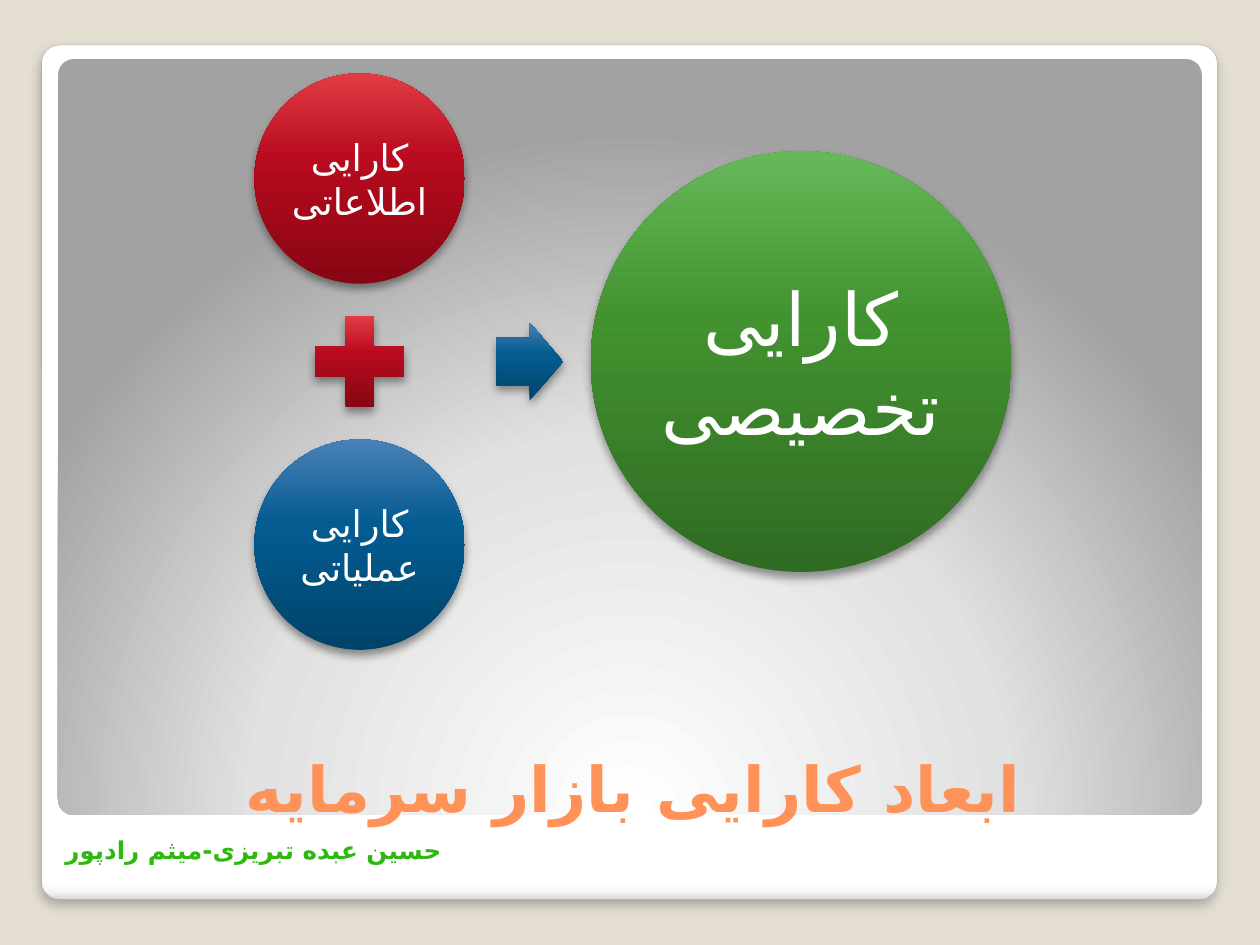
from dataclasses import dataclass

from pptx import Presentation
from pptx.dml.color import RGBColor
from pptx.enum.shapes import MSO_SHAPE as Shape
from pptx.enum.text import MSO_ANCHOR as Anchor, MSO_AUTO_SIZE as AutoSize, PP_ALIGN as Align
from pptx.oxml import parse_xml
from pptx.oxml.ns import nsdecls, qn
from pptx.util import Cm, Pt

FONT = "DejaVu Sans"
COLORS = {
    "background": "E3DED1",
    "frame_line": "A4A4A4",
    "title": "FF9258",
    "authors": "2DB90E",
    "white": "FFFFFF",
    "shadow": "000000",
}
FRAME_STOPS = [(0, "FFFFFF"), (98, "FFFFFF"), (99, "F7F7F7"), (100, "DADADA")]
PANEL_STOPS = [(0, "FFFFFF"), (55, "E1E1E1"), (100, "A2A2A2")]
GLOSS = {
    "red": [(0, "870614"), (60, "B80B1E"), (100, "E13C45")],
    "blue": [(0, "00436A"), (60, "035C91"), (100, "4A80B7")],
    "green": [(0, "2F6B22"), (60, "429230"), (100, "66B959")],
}
PANEL_PATH = '<a:path path="circle"><a:fillToRect l="50000" t="175000" r="50000" b="-75000"/></a:path>'

STACK_X, MID_Y, STACK_STEP = 7.25, 7.29, 3.69
SMALL, LARGE = 4.24, 8.48


@dataclass
class Figure:
    kind: Shape
    x: float
    y: float
    width: float
    height: float
    color: str
    adjustments: tuple[float, ...] = ()
    text: str = ""
    size: int = 0
    inset: float = 0


FIGURES = [
    Figure(Shape.OVAL, STACK_X, MID_Y - STACK_STEP, SMALL, SMALL, "red",
           text="کارایی اطلاعاتی", size=21, inset=0.06),
    Figure(Shape.CROSS, STACK_X, MID_Y, 1.8, 1.83, "red", (0.34,)),
    Figure(Shape.OVAL, STACK_X, MID_Y + STACK_STEP, SMALL, SMALL, "blue",
           text="کارایی عملیاتی", size=21, inset=0.06),
    Figure(Shape.RIGHT_ARROW, 10.68, MID_Y, 1.35, 1.57, "blue", (0.61, 0.5)),
    Figure(Shape.OVAL, 16.15, MID_Y, LARGE, LARGE, "green",
           text="کارایی تخصیصی", size=42, inset=0.15),
]


def rgb(name: str) -> RGBColor:
    return RGBColor.from_string(COLORS[name])


def set_gradient(sp, stops: list[tuple[int, str]], direction: str) -> None:
    marks = "".join(
        f'<a:gs pos="{pos * 1000}"><a:srgbClr val="{color}"/></a:gs>' for pos, color in stops
    )
    grad = parse_xml(
        f'<a:gradFill {nsdecls("a")} rotWithShape="1"><a:gsLst>{marks}</a:gsLst>{direction}</a:gradFill>'
    )
    sp._element.spPr.find(qn("a:prstGeom")).addnext(grad)


def linear(angle: int) -> str:
    return f'<a:lin ang="{angle * 60000}" scaled="0"/>'


def set_shadow(sp, alpha: int, blur: float, distance: float) -> None:
    effects = sp._element.spPr.find(qn("a:effectLst"))
    effects.append(parse_xml(
        f'<a:outerShdw {nsdecls("a")} blurRad="{Pt(blur)}" dist="{Pt(distance)}" dir="5400000" '
        f'algn="ctr" rotWithShape="0"><a:srgbClr val="{COLORS["shadow"]}">'
        f'<a:alpha val="{alpha * 1000}"/></a:srgbClr></a:outerShdw>'
    ))


def add_shape(slide, kind: Shape, left: float, top: float, width: float, height: float,
              adjustments: tuple[float, ...] = ()):
    sp = slide.shapes.add_shape(kind, Cm(left), Cm(top), Cm(width), Cm(height))
    sp.shadow.inherit = False
    sp.line.fill.background()
    for i, value in enumerate(adjustments):
        sp.adjustments[i] = value
    return sp


def write(tf, text: str, size: int, color: str, bold: bool, align: Align, rtl: bool) -> None:
    tf.word_wrap = True
    p = tf.paragraphs[0]
    p.add_run().text = text
    p.alignment = align
    p.font.name, p.font.size, p.font.bold = FONT, Pt(size), bold
    p.font.color.rgb = rgb(color)
    p.font._element.append(parse_xml(f'<a:cs {nsdecls("a")} typeface="{FONT}"/>'))
    if rtl:
        p._p.get_or_add_pPr().set("rtl", "1")


def add_backdrop(slide) -> None:
    frame = add_shape(slide, Shape.ROUNDED_RECTANGLE, 0.84, 0.91, 23.7, 17.22, (0.021,))
    set_gradient(frame, FRAME_STOPS, linear(90))
    frame.line.color.rgb = rgb("frame_line")
    frame.line.width = Pt(0.16)
    set_shadow(frame, 25, 6, 4)
    panel = add_shape(slide, Shape.ROUNDED_RECTANGLE, 1.17, 1.19, 23.06, 15.24, (0.021,))
    set_gradient(panel, PANEL_STOPS, PANEL_PATH)


def add_authors(slide) -> None:
    box = slide.shapes.add_textbox(Cm(1.07), Cm(16.71), Cm(8.69), Cm(0.86))
    write(box.text_frame, "حسین عبده تبریزی-میثم رادپور", 14, "authors", True, Align.LEFT, False)


def place_title(slide) -> None:
    title = slide.shapes.title
    title.left, title.top, title.width, title.height = Cm(1.4), Cm(13.84), Cm(22.73), Cm(2.92)
    tf = title.text_frame
    tf.auto_size = AutoSize.NONE
    tf.vertical_anchor = Anchor.BOTTOM
    write(tf, "ابعاد کارایی بازار سرمایه", 36, "title", True, Align.CENTER, True)
    slide.shapes._spTree.append(title._element)


def add_figure(slide, fig: Figure) -> None:
    sp = add_shape(slide, fig.kind, fig.x - fig.width / 2, fig.y - fig.height / 2,
                   fig.width, fig.height, fig.adjustments)
    set_gradient(sp, GLOSS[fig.color], linear(270))
    set_shadow(sp, 40, 5.2, 3)
    if fig.text:
        tf = sp.text_frame
        tf.margin_left = tf.margin_right = tf.margin_top = tf.margin_bottom = Cm(fig.inset)
        tf.vertical_anchor = Anchor.MIDDLE
        write(tf, fig.text, fig.size, "white", False, Align.CENTER, True)


def main() -> None:
    prs = Presentation()
    prs.slide_width, prs.slide_height = Cm(25.4), Cm(19.05)
    slide = prs.slides.add_slide(prs.slide_layouts[5])
    slide.background.fill.solid()
    slide.background.fill.fore_color.rgb = rgb("background")
    add_backdrop(slide)
    add_authors(slide)
    place_title(slide)
    for fig in FIGURES:
        add_figure(slide, fig)
    prs.save("out.pptx")


if __name__ == "__main__":
    main()
